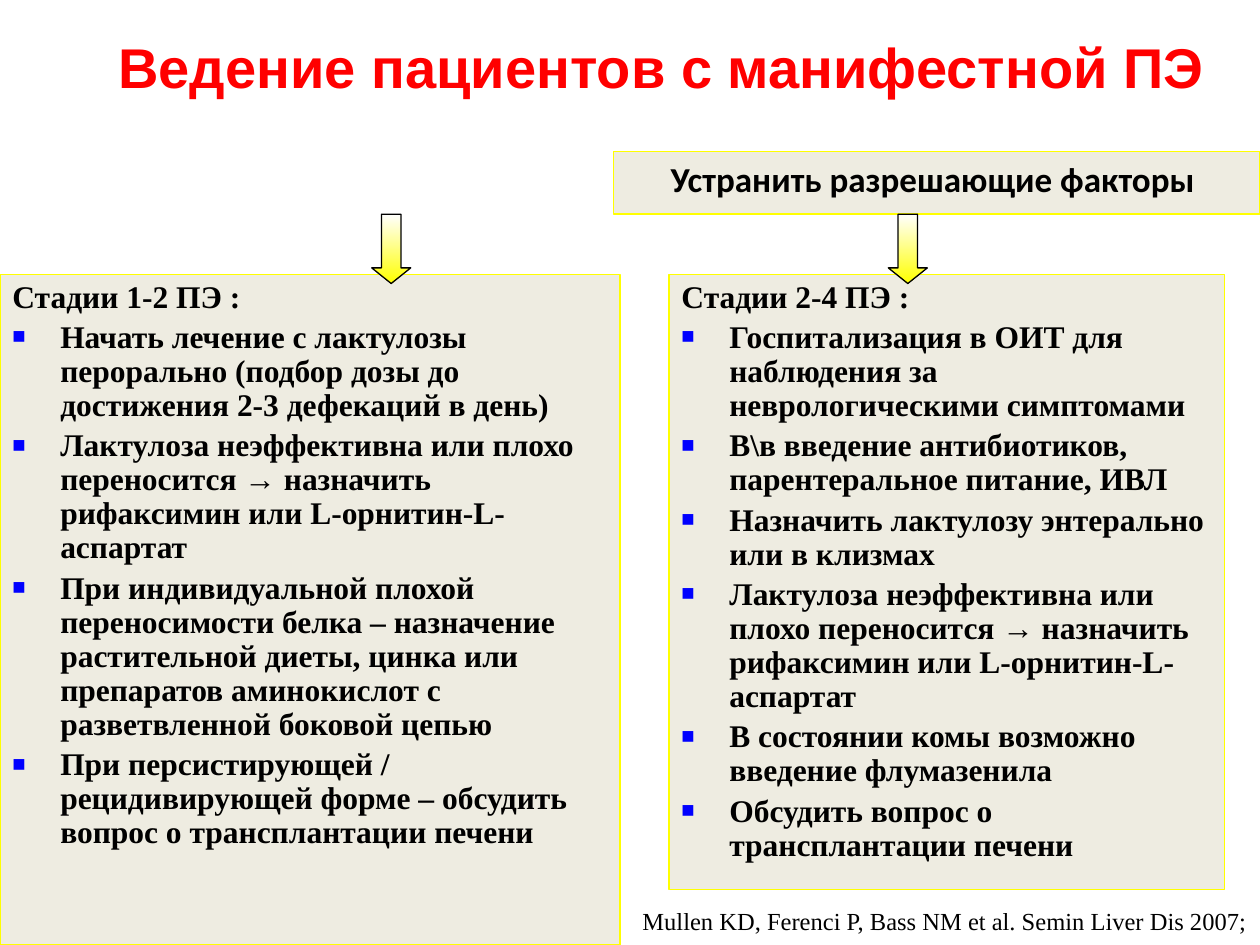
from lxml import etree
from pptx import Presentation
from pptx.dml.color import RGBColor
from pptx.enum.shapes import MSO_SHAPE
from pptx.enum.text import MSO_ANCHOR, PP_ALIGN
from pptx.oxml.ns import qn
from pptx.util import Inches, Pt

RECTANGLE = MSO_SHAPE.RECTANGLE
DOWN_ARROW = MSO_SHAPE.DOWN_ARROW
TOP = MSO_ANCHOR.TOP
MIDDLE = MSO_ANCHOR.MIDDLE
LEFT = PP_ALIGN.LEFT
CENTER = PP_ALIGN.CENTER

RED = RGBColor(0xFF, 0x00, 0x00)
BLUE = RGBColor(0x00, 0x00, 0xFF)
YELLOW = RGBColor(0xFF, 0xFF, 0x00)
BEIGE = RGBColor(0xEE, 0xEC, 0xE1)
BLACK = RGBColor(0x00, 0x00, 0x00)
WHITE = RGBColor(0xFF, 0xFF, 0xFF)

SERIF = "Times New Roman"
HANGING = Inches(0.38)

EARLY_STAGES = [
    "Начать лечение с лактулозы перорально (подбор дозы до достижения 2-3 дефекаций в день)",
    "Лактулоза неэффективна или плохо переносится → назначить рифаксимин или L-орнитин-L-аспартат",
    "При индивидуальной плохой переносимости белка – назначение растительной диеты, "
    "цинка или препаратов аминокислот с разветвленной боковой цепью",
    "При персистирующей / рецидивирующей форме – обсудить вопрос о трансплантации печени",
]
LATE_STAGES = [
    "Госпитализация в ОИТ для наблюдения за неврологическими симптомами",
    "В\\в введение антибиотиков, парентеральное питание, ИВЛ",
    "Назначить лактулозу энтерально или в клизмах",
    "Лактулоза неэффективна или плохо переносится → назначить рифаксимин или L-орнитин-L-аспартат",
    "В состоянии комы возможно введение флумазенила",
    "Обсудить вопрос о трансплантации печени",
]


def set_font(paragraph, name, size, color=BLACK, bold=True):
    """Set the font shared by all runs of a paragraph."""
    font = paragraph.font
    font.name, font.size, font.bold = name, Pt(size), bold
    font.color.rgb = color


def set_hanging(paragraph):
    """Give a paragraph a hanging indent."""
    properties = paragraph._p.get_or_add_pPr()
    properties.set("marL", str(HANGING))
    properties.set("indent", str(-HANGING))


def add_bullet(paragraph):
    """Give a paragraph a small blue square bullet."""
    properties = paragraph._p.get_or_add_pPr()
    color = etree.SubElement(properties, qn("a:buClr"))
    etree.SubElement(color, qn("a:srgbClr"), val=str(BLUE))
    etree.SubElement(properties, qn("a:buSzPct"), val="70000")
    etree.SubElement(properties, qn("a:buFont"), typeface=SERIF)
    etree.SubElement(properties, qn("a:buChar"), char="■")


def add_text(slide, box, text, name, size, color=BLACK, bold=True, align=LEFT, anchor=TOP):
    """Add a one-paragraph text box."""
    frame = slide.shapes.add_textbox(*map(Inches, box)).text_frame
    frame.word_wrap = True
    frame.vertical_anchor = anchor
    paragraph = frame.paragraphs[0]
    paragraph.text = text
    paragraph.alignment = align
    set_font(paragraph, name, size, color, bold)


def add_card(slide, box):
    """Add a beige card with a yellow outline and return its text frame."""
    shape = slide.shapes.add_shape(RECTANGLE, *map(Inches, box))
    shape.shadow.inherit = False
    shape.fill.solid()
    shape.fill.fore_color.rgb = BEIGE
    shape.line.color.rgb = YELLOW
    shape.line.width = Pt(0.75)
    frame = shape.text_frame
    frame.word_wrap = True
    frame.vertical_anchor = TOP
    return frame


def add_heading(slide, box, text):
    """Add the card with the step common to both branches."""
    paragraph = add_card(slide, box).paragraphs[0]
    paragraph.text = text
    paragraph.alignment = CENTER
    paragraph.space_before = Pt(4)
    set_hanging(paragraph)
    set_font(paragraph, "Calibri", 20)


def add_stage_panel(slide, box, title, steps):
    """Add a card with a stage title and its bulleted steps."""
    frame = add_card(slide, box)
    for index, text in enumerate([title, *steps]):
        paragraph = frame.add_paragraph() if index else frame.paragraphs[0]
        paragraph.text = text
        paragraph.alignment = LEFT
        paragraph.line_spacing = 0.9
        paragraph.space_before = Pt(3.6)
        set_hanging(paragraph)
        if index:
            add_bullet(paragraph)
        set_font(paragraph, SERIF, 18)


def add_down_arrow(slide, box):
    """Add a block arrow that fades from white to yellow."""
    shape = slide.shapes.add_shape(DOWN_ARROW, *map(Inches, box))
    shape.shadow.inherit = False
    shape.adjustments[0] = 0.5
    shape.adjustments[1] = 0.4
    shape.fill.gradient()
    shape.fill.gradient_angle = 270
    for stop, position, color in zip(shape.fill.gradient_stops, (0, 1), (WHITE, YELLOW)):
        stop.position = position
        stop.color.rgb = color
    shape.line.color.rgb = BLACK
    shape.line.width = Pt(0.75)


def main():
    """Build and save the presentation."""
    presentation = Presentation()
    presentation.slide_width = Inches(10)
    presentation.slide_height = Inches(7.5)
    slide = presentation.slides.add_slide(presentation.slide_layouts[6])
    add_text(slide, (0.5, -0.1, 9.5, 1.25), "Ведение пациентов с манифестной ПЭ",
             "Arial", 32, RED, align=CENTER, anchor=MIDDLE)
    add_heading(slide, (4.87, 1.2, 5.13, 0.5), "Устранить разрешающие факторы ")
    add_stage_panel(slide, (0, 2.18, 4.92, 5.32), "Стадии 1-2 ПЭ :", EARLY_STAGES)
    add_stage_panel(slide, (5.31, 2.18, 4.41, 4.88), "Стадии 2-4 ПЭ :", LATE_STAGES)
    for left in (2.95, 7.05):
        add_down_arrow(slide, (left, 1.7, 0.31, 0.55))
    add_text(slide, (5, 7.14, 5.28, 0.33),
             "Mullen KD, Ferenci P, Bass NM et al. Semin Liver Dis 2007;",
             SERIF, 14, bold=False)
    presentation.save("out.pptx")


if __name__ == "__main__":
    main()
